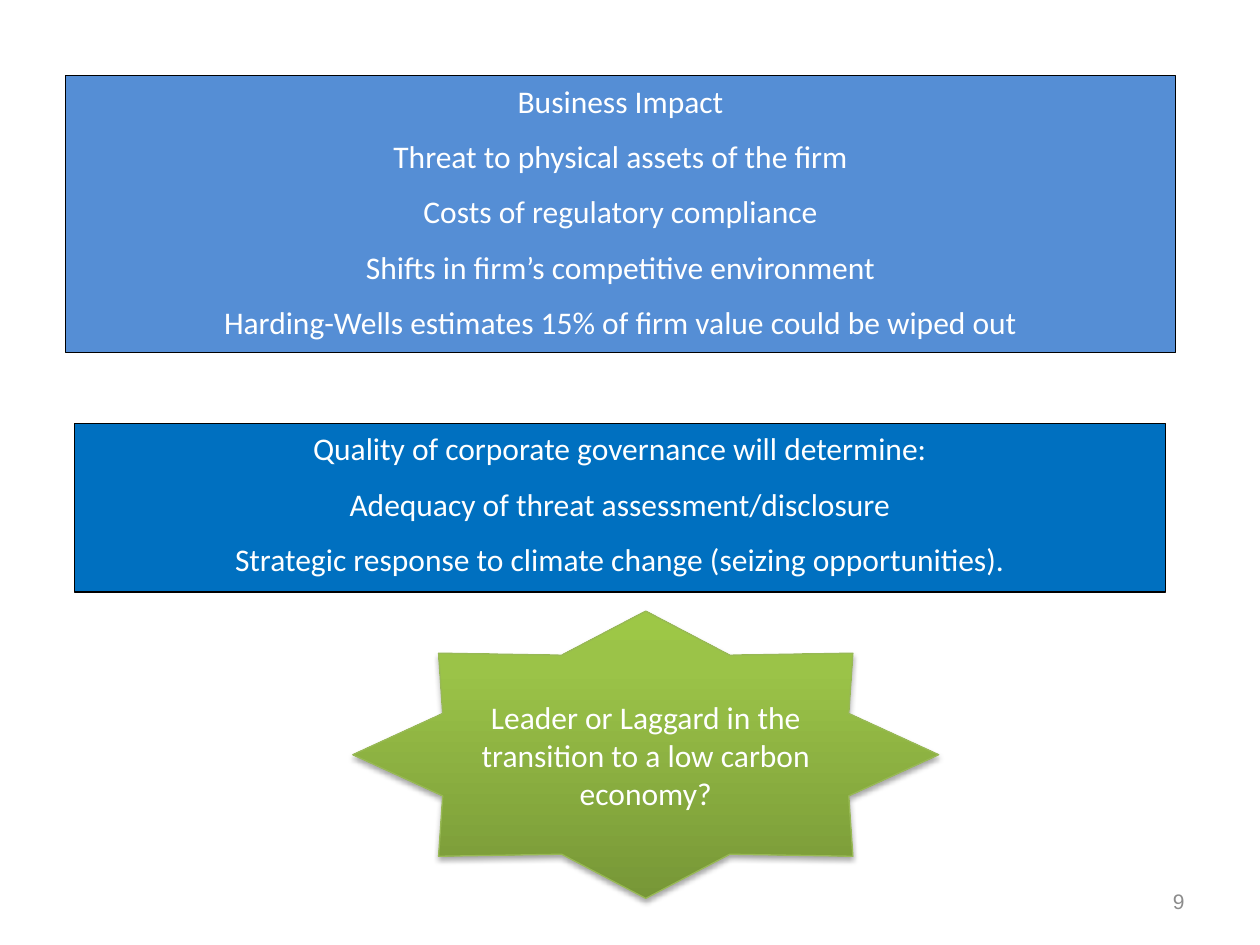
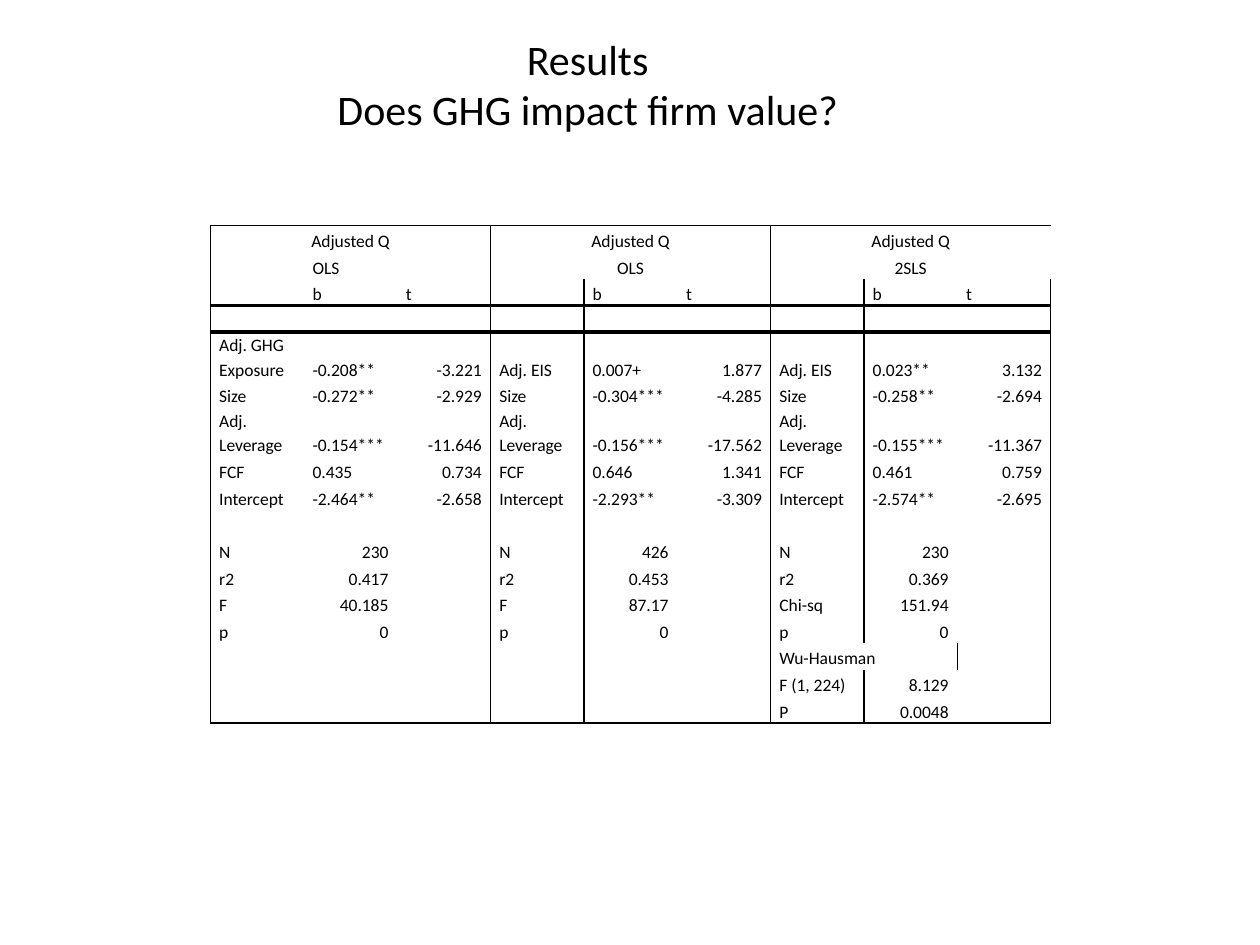
from lxml import etree
from pptx import Presentation
from pptx.dml.color import RGBColor
from pptx.enum import shapes, text
from pptx.oxml import parse_xml
from pptx.oxml.ns import nsdecls, qn
from pptx.util import Inches, Pt

WHITE = RGBColor(0xFF, 0xFF, 0xFF)
BLACK = RGBColor(0, 0, 0)
GRAY = RGBColor(0x8C, 0x8C, 0x8C)
LIGHT_BLUE = RGBColor(0x55, 0x8E, 0xD5)
DEEP_BLUE = RGBColor(0x00, 0x70, 0xC0)
LEAF_LINE = RGBColor(0x98, 0xB9, 0x55)
LEAF_STOPS = [(0, RGBColor(0x77, 0x97, 0x37)),
              (80, RGBColor(0x9B, 0xC3, 0x48)),
              (100, RGBColor(0x9D, 0xC7, 0x46))]

LEFT, CENTER, RIGHT = (text.PP_ALIGN.LEFT, text.PP_ALIGN.CENTER,
                       text.PP_ALIGN.RIGHT)
NO_STYLE = "{2D5ABB26-0587-4C30-8999-92F81FD0307C}"

IMPACTS = [
    "Business Impact",
    "Threat to physical assets of the firm",
    "Costs of regulatory compliance",
    "Shifts in firm’s competitive environment",
    "Harding-Wells estimates 15% of firm value could be wiped out",
]
GOVERNANCE = [
    "Quality of corporate governance will determine:",
    "Adequacy of threat assessment/disclosure",
    "Strategic response to climate change (seizing opportunities).",
]

# One entry per model: method, coefficients (name, b, t), fit statistics.
MODELS = [
    ("OLS",
     [("Adj. GHG Exposure", "-0.208**", "-3.221"),
      ("Size", "-0.272**", "-2.929"),
      ("Adj. Leverage", "-0.154***", "-11.646"),
      ("FCF", "0.435", "0.734"),
      ("Intercept", "-2.464**", "-2.658")],
     [("N", "230"), ("r2", "0.417"), ("F", "40.185"), ("p", "0")]),
    ("OLS",
     [("Adj. EIS", "0.007+", "1.877"),
      ("Size", "-0.304***", "-4.285"),
      ("Adj. Leverage", "-0.156***", "-17.562"),
      ("FCF", "0.646", "1.341"),
      ("Intercept", "-2.293**", "-3.309")],
     [("N", "426"), ("r2", "0.453"), ("F", "87.17"), ("p", "0")]),
    ("2SLS",
     [("Adj. EIS", "0.023**", "3.132"),
      ("Size", "-0.258**", "-2.694"),
      ("Adj. Leverage", "-0.155***", "-11.367"),
      ("FCF", "0.461", "0.759"),
      ("Intercept", "-2.574**", "-2.695")],
     [("N", "230"), ("r2", "0.369"), ("Chi-sq", "151.94"), ("p", "0"),
      ("Wu-Hausman", ""), ("F (1, 224)", "8.129"), ("P", "0.0048")]),
]
ROWS, GROUP = 17, 3
HEAD_END, COEF_START, STATS_START = 2, 4, 10


class Deck:
    def __init__(self, font="Calibri"):
        self.prs = Presentation()
        self.prs.slide_width, self.prs.slide_height = Inches(10), Inches(7.5)
        self.font = font
        self.slide = None

    def add_slide(self, layout):
        self.slide = self.prs.slides.add_slide(self.prs.slide_layouts[layout])

    def format(self, tf, size, color, align=CENTER, after=None, font=None):
        for p in tf.paragraphs:
            p.alignment = align
            if after:
                p.space_after = Pt(after)
            for r in p.runs:
                r.font.size = Pt(size)
                r.font.name = font or self.font
                r.font.color.rgb = color

    def title(self, words, x, y, w, h):
        sp = self.slide.shapes.title
        sp.left, sp.top, sp.width, sp.height = map(Inches, (x, y, w, h))
        tf = sp.text_frame
        tf.text = words
        tf.auto_size = text.MSO_AUTO_SIZE.NONE
        tf.vertical_anchor = text.MSO_ANCHOR.MIDDLE
        self.format(tf, 24, BLACK)

    def shape(self, kind, x, y, w, h, line):
        sp = self.slide.shapes.add_shape(kind, *map(Inches, (x, y, w, h)))
        sp.shadow.inherit = False
        sp.line.color.rgb = line
        sp.line.width = Pt(0.75)
        return sp

    def panel(self, lines, fill, x, y, w, h):
        sp = self.shape(shapes.MSO_SHAPE.RECTANGLE, x, y, w, h, BLACK)
        sp.fill.solid()
        sp.fill.fore_color.rgb = fill
        tf = sp.text_frame
        tf.text = "\n".join(lines)
        tf.vertical_anchor = text.MSO_ANCHOR.TOP
        self.format(tf, 18, WHITE, after=10)

    def star(self, words, x, y, w, h):
        """Star with a bottom-to-top gradient and a soft shadow below."""
        sp = self.shape(shapes.MSO_SHAPE.STAR_8_POINT, x, y, w, h, LEAF_LINE)
        stops = "".join(
            f'<a:gs pos="{pos * 1000}"><a:srgbClr val="{color}"/></a:gs>'
            for pos, color in LEAF_STOPS)
        props = sp.element.spPr
        props.find(qn("a:prstGeom")).addnext(parse_xml(
            f'<a:gradFill {nsdecls("a")} rotWithShape="1">'
            f'<a:gsLst>{stops}</a:gsLst>'
            '<a:lin ang="16200000" scaled="0"/></a:gradFill>'))
        props.find(qn("a:effectLst")).append(parse_xml(
            f'<a:outerShdw {nsdecls("a")} blurRad="{Pt(3.1)}" '
            f'dist="{Pt(1.8)}" dir="5400000" rotWithShape="0">'
            '<a:srgbClr val="000000"><a:alpha val="35000"/></a:srgbClr>'
            '</a:outerShdw>'))
        tf = sp.text_frame
        tf.text = words
        tf.vertical_anchor = text.MSO_ANCHOR.MIDDLE
        self.format(tf, 18, WHITE)

    def page_number(self, number):
        box = self.slide.shapes.add_textbox(
            Inches(7.17), Inches(6.95), Inches(2.33), Inches(0.4))
        tf = box.text_frame
        tf.word_wrap = True
        tf.text = str(number)
        tf.vertical_anchor = text.MSO_ANCHOR.MIDDLE
        self.format(tf, 12, GRAY, RIGHT, font="Arial")

    def table(self, rows, cols, x, y, col_width, row_height):
        frame = self.slide.shapes.add_table(
            rows, cols, Inches(x), Inches(y),
            Inches(col_width * cols), Inches(row_height * rows))
        tbl = frame.table
        tbl.first_row = tbl.horz_banding = False
        frame.element.find(".//" + qn("a:tableStyleId")).text = NO_STYLE
        return tbl

    def cell(self, cell, words, align, borders):
        cell.margin_left = cell.margin_right = Inches(0.07)
        cell.margin_top = cell.margin_bottom = 0
        cell.vertical_anchor = text.MSO_ANCHOR.BOTTOM
        props = cell._tc.get_or_add_tcPr()
        for side in "LRTB":
            if side in borders:
                ln = etree.SubElement(props, qn("a:ln" + side),
                                      w=str(Pt(borders[side])))
                fill = etree.SubElement(ln, qn("a:solidFill"))
                etree.SubElement(fill, qn("a:srgbClr"), val=str(BLACK))
        cell.fill.background()
        cell.text = words
        p = cell.text_frame.paragraphs[0]
        p.line_spacing = 1.15
        if not words:
            etree.SubElement(p._p, qn("a:endParaRPr"), sz="1000")
        self.format(cell.text_frame, 10, BLACK, align)


def model_cells(index):
    """Map (row, column in group) to (words, alignment) for one model."""
    method, coefs, stats = MODELS[index]
    cells = {(0, 0): ("Adjusted Q", CENTER),
             (2, 1): ("b", LEFT), (2, 2): ("t", LEFT)}
    cells[(1, 0) if index else (1, 1)] = (method, CENTER if index else LEFT)
    for row, (name, b, t) in enumerate(coefs, COEF_START):
        cells.update({(row, 0): (name, LEFT), (row, 1): (b, LEFT),
                      (row, 2): (t, RIGHT)})
    for row, (name, value) in enumerate(stats, STATS_START):
        cells.update({(row, 0): (name, LEFT), (row, 1): (value, RIGHT)})
    return cells


def cell_borders(row, col):
    borders = {}
    if col == 0:
        borders["L"] = 1
    if col == GROUP - 1:
        borders["R"] = 1
    if row == 0:
        borders["T"] = 1
    if row == HEAD_END + 1:
        borders["T"] = 2.25
    if row == HEAD_END:
        borders["B"] = 2.25
    if row == ROWS - 1:
        borders["B"] = 1
    return borders


def impact_slide(deck):
    deck.add_slide(6)
    deck.panel(IMPACTS, LIGHT_BLUE, 0.52, 0.6, 8.81, 2.2)
    deck.panel(GOVERNANCE, DEEP_BLUE, 0.59, 3.36, 8.66, 1.34)
    deck.star("Leader or Laggard in the transition to a low carbon economy?",
              2.8, 4.85, 4.65, 2.28)
    deck.page_number(9)


def results_slide(deck):
    deck.add_slide(5)
    deck.title("Results\vDoes GHG impact firm value?", 0, 0.25, 9.33, 0.83)
    tbl = deck.table(ROWS, GROUP * len(MODELS), 1.67, 1.79, 6.67 / 9, 3.6 / 17)
    for index, (_, _, stats) in enumerate(MODELS):
        first = index * GROUP
        cells = model_cells(index)
        for row in range(ROWS):
            for col in range(GROUP):
                words, align = cells.get((row, col), ("", LEFT))
                deck.cell(tbl.cell(row, first + col), words, align,
                          cell_borders(row, col))
        for row in range(2 if index else 1):
            tbl.cell(row, first).merge(tbl.cell(row, first + GROUP - 1))
        for row, (_, value) in enumerate(stats, STATS_START):
            if not value:
                tbl.cell(row, first).merge(tbl.cell(row, first + 1))


def main():
    deck = Deck()
    impact_slide(deck)
    results_slide(deck)
    deck.prs.save("out.pptx")


if __name__ == "__main__":
    main()
